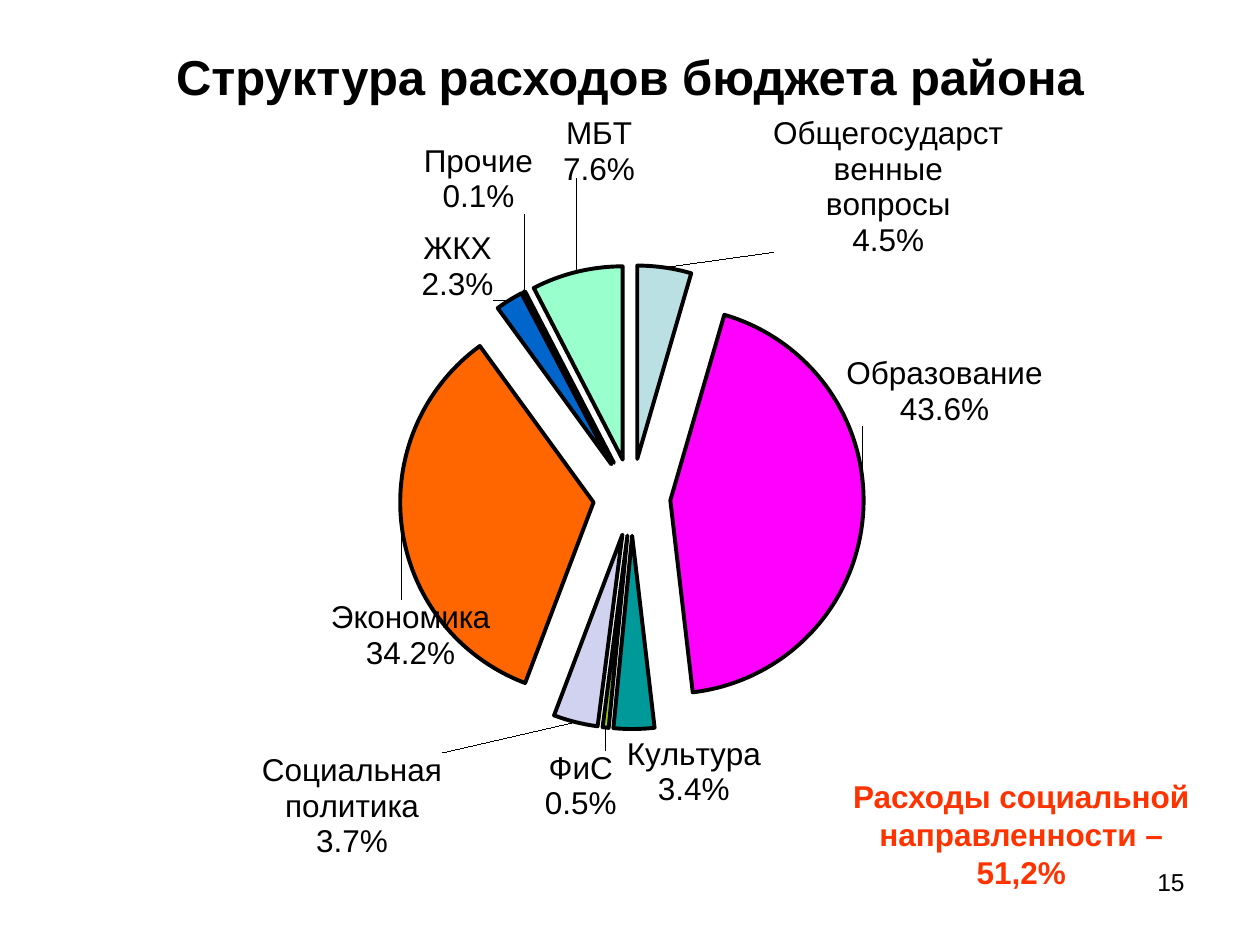
from copy import deepcopy
from dataclasses import dataclass

from pptx import Presentation
from pptx.chart.data import CategoryChartData
from pptx.dml.color import RGBColor
from pptx.enum.chart import XL_CHART_TYPE, XL_LABEL_POSITION
from pptx.enum.text import MSO_ANCHOR, PP_ALIGN
from pptx.oxml import parse_xml
from pptx.oxml.ns import nsdecls, qn
from pptx.util import Inches, Pt

PIE = XL_CHART_TYPE.PIE
OUTSIDE = XL_LABEL_POSITION.OUTSIDE_END
TOP, MIDDLE = MSO_ANCHOR.TOP, MSO_ANCHOR.MIDDLE
CENTER, RIGHT = PP_ALIGN.CENTER, PP_ALIGN.RIGHT


@dataclass(frozen=True)
class Theme:
    font: str = "Arial"
    text: str = "000000"
    accent: str = "FF3300"
    title_size: int = 28
    body_size: int = 18
    number_size: int = 14
    outline: float = 2.25


THEME = Theme()

# category, percent, fill, label shift as a fraction of the chart's width and height
EXPENSES = [
    ("Общегосударственные вопросы", 4.5, "BBE0E3", (0.09, -0.01)),
    ("Образование", 43.6, "FF00FF", (-0.02, -0.16)),
    ("Культура", 3.4, "009999", (0.05, 0)),
    ("ФиС", 0.5, "99CC00", (0.01, 0.02)),
    ("Социальная политика", 3.7, "D1D1F0", (-0.11, 0.03)),
    ("Экономика", 34.2, "FF6600", (0.08, 0.09)),
    ("ЖКХ", 2.3, "0066CC", (-0.01, 0.01)),
    ("Прочие", 0.1, "CC99FF", (0.01, -0.09)),
    ("МБТ", 7.6, "99FFCC", (0.05, -0.11)),
]
PLOT_AREA = dict(x=0.03, y=0.19, w=0.96, h=0.59)
EXPLOSION = 20


def style_font(font, size, color=THEME.text, bold=False):
    font.name = THEME.font
    font.size = Pt(size)
    font.bold = bold
    font.color.rgb = RGBColor.from_string(color)


def add_text(s, text, box, size, color=THEME.text, bold=False, align=CENTER, anchor=MIDDLE):
    tf = s.shapes.add_textbox(*map(Inches, box)).text_frame
    tf.word_wrap = True
    tf.vertical_anchor = anchor
    tf.text = text
    p = tf.paragraphs[0]
    p.alignment = align
    style_font(p.runs[0].font, size, color, bold)


def chart_element(tag, inner="", **attrs):
    attr_text = "".join(f' {k}="{v}"' for k, v in attrs.items())
    return parse_xml(f'<c:{tag} {nsdecls("c")}{attr_text}>{inner}</c:{tag}>')


def manual_layout(prefix="", **values):
    parts = prefix + "".join(f'<c:{k} val="{v}"/>' for k, v in values.items())
    return chart_element("layout", f"<c:manualLayout>{parts}</c:manualLayout>")


def place_plot(chart):
    plot_area = chart._chartSpace.chart.plotArea
    for old in plot_area.findall(qn("c:layout")):
        plot_area.remove(old)
    modes = '<c:layoutTarget val="inner"/><c:xMode val="edge"/><c:yMode val="edge"/>'
    plot_area.insert(0, manual_layout(modes, **PLOT_AREA))


def style_slices(series):
    series.format.line.width = Pt(THEME.outline)
    series._element.find(qn("c:spPr")).addnext(chart_element("explosion", val=EXPLOSION))
    for i, (_, _, color, _) in enumerate(EXPENSES):
        fmt = series.points[i].format
        fmt.fill.solid()
        fmt.fill.fore_color.rgb = RGBColor.from_string(color)
        fmt.line.width = Pt(THEME.outline)
        fmt.line.color.rgb = RGBColor.from_string(THEME.text)


def label_slices(series):
    """Show category and share, each label shifted from its usual place."""
    labels = series.data_labels
    style_font(labels.font, THEME.body_size)
    labels.number_format = "0.0%"
    labels.number_format_is_linked = False
    labels.position = OUTSIDE
    labels.show_value = False
    labels.show_category_name = True
    labels.show_percentage = True
    group = labels._element
    group.find(qn("c:showBubbleSize")).addnext(chart_element("separator", "\n"))
    shared = [e for e in group if e.tag != qn("c:showLeaderLines")]
    for i, (_, _, _, (dx, dy)) in enumerate(EXPENSES):
        label = chart_element("dLbl", f'<c:idx val="{i}"/>')
        label.append(manual_layout(x=dx, y=dy))
        label.extend(deepcopy(e) for e in shared)
        group.insert(i, label)


def add_expense_pie(s, box):
    data = CategoryChartData()
    data.categories = [row[0] for row in EXPENSES]
    data.add_series("Series 1", [row[1] for row in EXPENSES])
    chart = s.shapes.add_chart(PIE, *map(Inches, box), data).chart
    chart.has_legend = False
    chart.has_title = False
    style_font(chart.font, THEME.number_size, bold=True)
    plot = chart.plots[0]
    plot.vary_by_categories = True
    place_plot(chart)
    style_slices(plot.series[0])
    label_slices(plot.series[0])


def main():
    prs = Presentation()
    prs.slide_width, prs.slide_height = Inches(10), Inches(7.5)
    s = prs.slides.add_slide(prs.slide_layouts[6])
    add_text(s, "15", (7.17, 6.83, 2.33, 0.52), THEME.number_size, align=RIGHT, anchor=TOP)
    add_text(s, "Структура расходов бюджета района", (0.5, 0.3, 9, 0.61),
             THEME.title_size, bold=True)
    add_expense_pie(s, (0.17, 0.92, 9.5, 6.24))
    add_text(s, "Расходы социальной направленности – 51,2%", (6.65, 6.08, 2.91, 1.08),
             THEME.body_size, THEME.accent, bold=True)
    prs.save("out.pptx")


if __name__ == "__main__":
    main()
